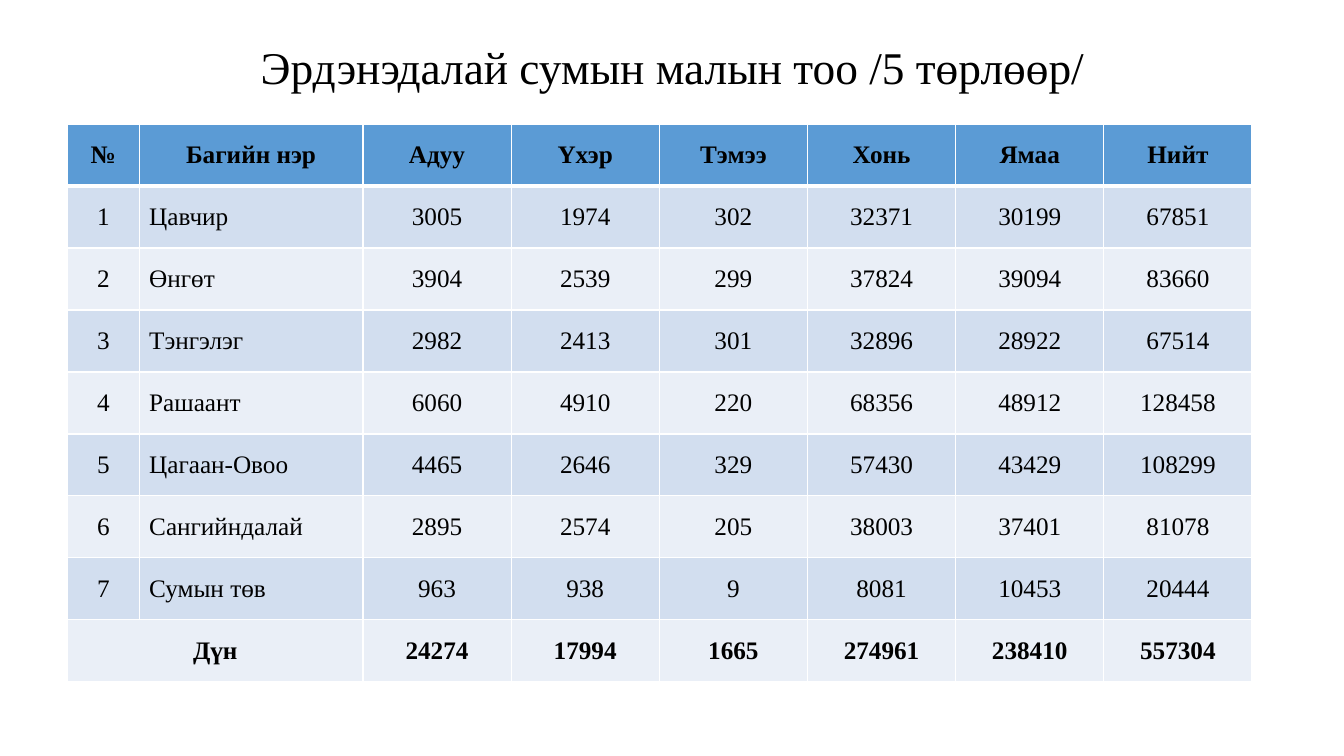
"""Build a slide with a table of livestock counts by district."""
from lxml.etree import SubElement
from pptx import Presentation
from pptx.dml.color import RGBColor
from pptx.enum.text import MSO_ANCHOR as Anchor, PP_ALIGN as Align
from pptx.oxml.ns import qn
from pptx.util import Inches, Pt

BLACK = RGBColor(0x00, 0x00, 0x00)
WHITE = RGBColor(0xFF, 0xFF, 0xFF)
HEADER_BLUE = RGBColor(0x5B, 0x9B, 0xD5)
BAND_DARK = RGBColor(0xD2, 0xDE, 0xEF)
BAND_LIGHT = RGBColor(0xEA, 0xEF, 0xF7)
FONT = "Times New Roman"

HERDS = [
    ("№", "Багийн нэр", "Адуу", "Үхэр", "Тэмээ", "Хонь", "Ямаа", "Нийт"),
    (1, "Цавчир", 3005, 1974, 302, 32371, 30199, 67851),
    (2, "Өнгөт", 3904, 2539, 299, 37824, 39094, 83660),
    (3, "Тэнгэлэг", 2982, 2413, 301, 32896, 28922, 67514),
    (4, "Рашаант", 6060, 4910, 220, 68356, 48912, 128458),
    (5, "Цагаан-Овоо", 4465, 2646, 329, 57430, 43429, 108299),
    (6, "Сангийндалай", 2895, 2574, 205, 38003, 37401, 81078),
    (7, "Сумын төв", 963, 938, 9, 8081, 10453, 20444),
    ("Дүн", "", 24274, 17994, 1665, 274961, 238410, 557304),
]
COLUMN_WIDTHS = [0.71, 2.22] + [1.47] * 6
ROW_HEIGHT = 0.615
TOTAL_ROW = len(HERDS) - 1


def write(frame, text, size, align, bold=False):
    frame.text = text
    para = frame.paragraphs[0]
    para.alignment = align
    for span in para.runs:
        span.font.name = FONT
        span.font.size = Pt(size)
        span.font.bold = bold
        span.font.color.rgb = BLACK
    return para


def add_border(cell, side, points):
    line = SubElement(cell._tc.get_or_add_tcPr(), qn(f"a:ln{side}"), w=str(Pt(points)))
    SubElement(SubElement(line, qn("a:solidFill")), qn("a:srgbClr"), val=str(WHITE))


deck = Presentation()
deck.slide_width, deck.slide_height = Inches(13.33), Inches(7.5)
page = deck.slides.add_slide(deck.slide_layouts[5])

title = page.shapes.title
title.left, title.top = Inches(0.92), Inches(0.4)
title.width, title.height = Inches(11.5), Inches(0.59)
heading = write(title.text_frame, "Эрдэнэдалай сумын малын тоо /5 төрлөөр/", 32.4, Align.CENTER)
heading.line_spacing = 0.9
title.text_frame.vertical_anchor = Anchor.MIDDLE

table = page.shapes.add_table(
    len(HERDS), len(COLUMN_WIDTHS), Inches(0.67), Inches(1.23),
    Inches(sum(COLUMN_WIDTHS)), Inches(ROW_HEIGHT * len(HERDS)),
).table
for column, width in zip(table.columns, COLUMN_WIDTHS):
    column.width = Inches(width)

for row_index, herd in enumerate(HERDS):
    table.rows[row_index].height = Inches(ROW_HEIGHT)
    is_header = row_index == 0
    band = BAND_DARK if row_index % 2 else BAND_LIGHT
    for column_index, value in enumerate(herd):
        cell = table.cell(row_index, column_index)
        is_name = column_index == 1 and 0 < row_index < TOTAL_ROW
        write(cell.text_frame, str(value), 18, Align.LEFT if is_name else Align.CENTER,
              bold=row_index in (0, TOTAL_ROW))
        cell.vertical_anchor = Anchor.MIDDLE
        for side in "LRTB":
            thick = (is_header and side == "B") or (row_index == 1 and side == "T")
            add_border(cell, side, 3 if thick else 1)
        cell.fill.solid()
        cell.fill.fore_color.rgb = HEADER_BLUE if is_header else band

table.cell(TOTAL_ROW, 0).merge(table.cell(TOTAL_ROW, 1))

deck.save("out.pptx")
